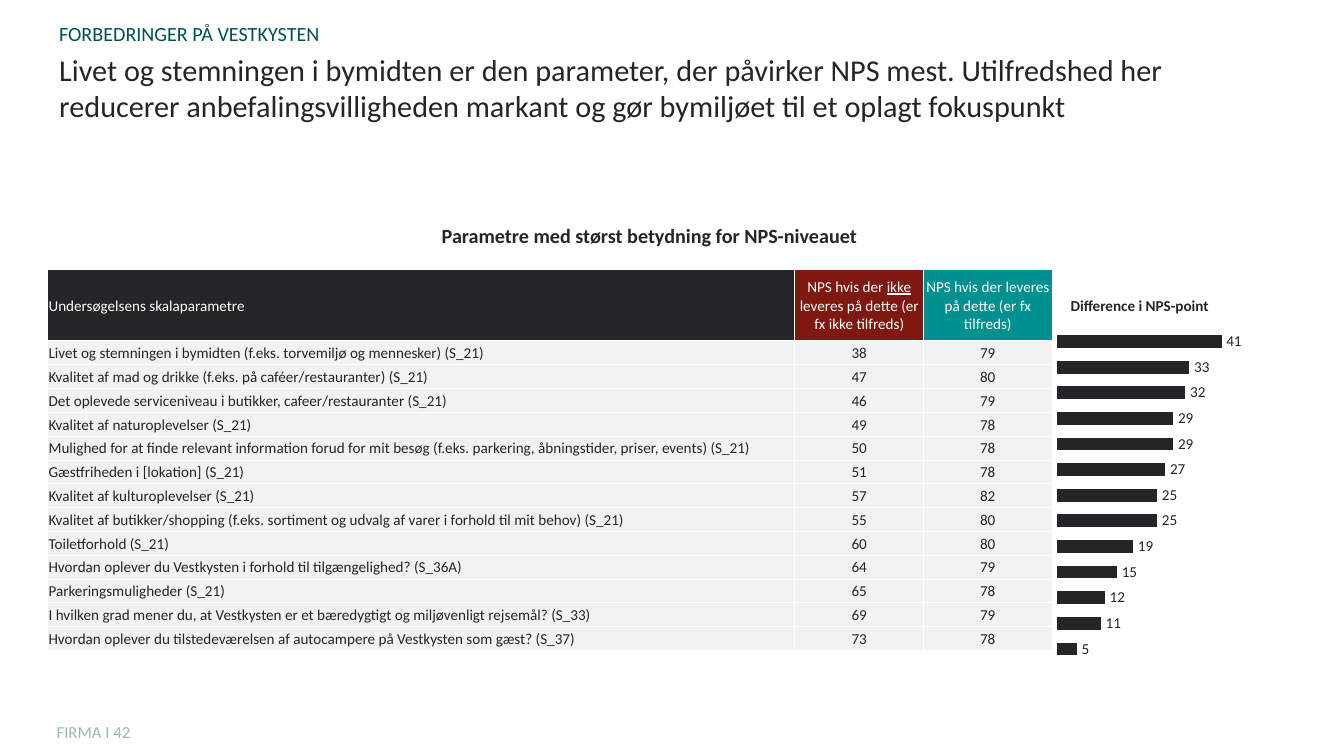
from dataclasses import dataclass

import pptx
import pptx.chart.data
import pptx.dml.color
import pptx.enum.chart
import pptx.enum.text
import pptx.oxml
import pptx.oxml.ns
import pptx.util

Cm = pptx.util.Cm
Pt = pptx.util.Pt
Align = pptx.enum.text.PP_ALIGN
Anchor = pptx.enum.text.MSO_ANCHOR

FONT = "Calibri"
INK = "252528"
WHITE = "FFFFFF"
ROW_FILL = "F2F2F2"
LEFT = 0.99
WIDTH = 25.3
COLUMN_WIDTHS = (15.7, 2.7, 2.7)
HEADER_HEIGHT = 1.5
ROW_HEIGHT = 0.5


@dataclass(frozen=True)
class Label:
    text: str
    left: float
    top: float
    width: float
    height: float
    size: float
    color: str = INK
    bold: bool = False
    align: Align = Align.LEFT


@dataclass(frozen=True)
class Header:
    spans: tuple[str, ...]
    fill: str
    align: Align = Align.CENTER


@dataclass(frozen=True)
class Parameter:
    name: str
    unmet: int
    met: int
    difference: int


TITLE = Label(
    "Livet og stemningen i bymidten er den parameter, der påvirker NPS mest. "
    "Utilfredshed her reducerer anbefalingsvilligheden markant og gør bymiljøet "
    "til et oplagt fokuspunkt",
    LEFT, 0.95, WIDTH, 1.27, 18,
)
LABELS = (
    Label("FIRMA I 42", 0.94, 15.04, 6.27, 0.69, 10, "99B9B9"),
    Label("FORBEDRINGER PÅ VESTKYSTEN", LEFT, 0.33, WIDTH, 0.64, 12, "005050"),
    Label("Parametre med størst betydning for NPS-niveauet",
          LEFT, 4.57, WIDTH, 0.76, 12, bold=True, align=Align.CENTER),
    Label("Difference i NPS-point", 22.23, 6.1, 3.68, 0.64, 9, bold=True),
)
UNDERLINED = "ikke"
HEADERS = (
    Header(("Undersøgelsens skalaparametre",), INK, Align.LEFT),
    Header(("NPS hvis der ", UNDERLINED, " leveres på dette (er fx ikke tilfreds)"), "7F1810"),
    Header(("NPS hvis der leveres på dette (er fx tilfreds)",), "009090"),
)
PARAMETERS = (
    Parameter("Livet og stemningen i bymidten (f.eks. torvemiljø og mennesker) (S_21)", 38, 79, 41),
    Parameter("Kvalitet af mad og drikke (f.eks. på caféer/restauranter) (S_21)", 47, 80, 33),
    Parameter("Det oplevede serviceniveau i butikker, cafeer/restauranter (S_21)", 46, 79, 32),
    Parameter("Kvalitet af naturoplevelser (S_21)", 49, 78, 29),
    Parameter("Mulighed for at finde relevant information forud for mit besøg "
              "(f.eks. parkering, åbningstider, priser, events) (S_21)", 50, 78, 29),
    Parameter("Gæstfriheden i [lokation] (S_21)", 51, 78, 27),
    Parameter("Kvalitet af kulturoplevelser (S_21)", 57, 82, 25),
    Parameter("Kvalitet af butikker/shopping (f.eks. sortiment og udvalg af varer "
              "i forhold til mit behov) (S_21)", 55, 80, 25),
    Parameter("Toiletforhold (S_21)", 60, 80, 19),
    Parameter("Hvordan oplever du Vestkysten i forhold til tilgængelighed? (S_36A)", 64, 79, 15),
    Parameter("Parkeringsmuligheder (S_21)", 65, 78, 12),
    Parameter("I hvilken grad mener du, at Vestkysten er et bæredygtigt og "
              "miljøvenligt rejsemål? (S_33)", 69, 79, 11),
    Parameter("Hvordan oplever du tilstedeværelsen af autocampere på Vestkysten "
              "som gæst? (S_37)", 73, 78, 5),
)


def rgb(color: str) -> pptx.dml.color.RGBColor:
    return pptx.dml.color.RGBColor.from_string(color)


def style_font(font, size: float, color: str, bold: bool = False) -> None:
    font.name = FONT
    font.size = Pt(size)
    font.bold = bold
    font.color.rgb = rgb(color)


def write_label(box, label: Label) -> None:
    box.left, box.top = Cm(label.left), Cm(label.top)
    box.width, box.height = Cm(label.width), Cm(label.height)
    frame = box.text_frame
    frame.word_wrap = True
    frame.auto_size = pptx.enum.text.MSO_AUTO_SIZE.NONE
    frame.vertical_anchor = Anchor.TOP
    frame.text = label.text
    para = frame.paragraphs[0]
    para.alignment = label.align
    style_font(para.font, label.size, label.color, label.bold)


def add_borders(cell) -> None:
    properties = cell._tc.get_or_add_tcPr()
    for side in ("lnL", "lnR", "lnT", "lnB"):
        properties.append(pptx.oxml.parse_xml(
            f'<a:{side} {pptx.oxml.ns.nsdecls("a")} w="{Pt(0.5)}">'
            f'<a:solidFill><a:srgbClr val="{WHITE}"/></a:solidFill></a:{side}>'
        ))


def write_cell(cell, spans: tuple[str, ...], fill: str, color: str, align: Align) -> None:
    add_borders(cell)
    cell.fill.solid()
    cell.fill.fore_color.rgb = rgb(fill)
    cell.margin_left = cell.margin_right = cell.margin_top = Cm(0.03)
    cell.margin_bottom = 0
    cell.vertical_anchor = Anchor.MIDDLE
    para = cell.text_frame.paragraphs[0]
    para.alignment = align
    style_font(para.font, 9, color)
    for text in spans:
        span = para.add_run()
        span.text = text
        if text == UNDERLINED:
            span.font.underline = True


def add_parameter_table(page) -> None:
    table = page.shapes.add_table(
        len(PARAMETERS) + 1, len(HEADERS), Cm(LEFT), Cm(5.66), Cm(sum(COLUMN_WIDTHS)),
        Cm(HEADER_HEIGHT + ROW_HEIGHT * len(PARAMETERS)),
    ).table
    table.first_row = table.horz_banding = False
    for column, width in zip(table.columns, COLUMN_WIDTHS):
        column.width = Cm(width)
    for index, row in enumerate(table.rows):
        row.height = Cm(ROW_HEIGHT if index else HEADER_HEIGHT)
    for column, header in enumerate(HEADERS):
        write_cell(table.cell(0, column), header.spans, header.fill, WHITE, header.align)
        for row, parameter in enumerate(PARAMETERS, 1):
            text = str((parameter.name, parameter.unmet, parameter.met)[column])
            write_cell(table.cell(row, column), (text,), ROW_FILL, INK, header.align)


def add_difference_chart(page) -> None:
    data = pptx.chart.data.CategoryChartData(number_format="0")
    data.categories = [str(number) for number in range(1, len(PARAMETERS) + 1)]
    data.add_series("Series 1", [parameter.difference for parameter in PARAMETERS])
    chart = page.shapes.add_chart(
        pptx.enum.chart.XL_CHART_TYPE.BAR_CLUSTERED,
        Cm(22.1), Cm(6.76), Cm(4.4), Cm(7.29), data,
    ).chart
    chart.has_legend = chart.has_title = False
    style_font(chart.font, 10, INK)
    chart.category_axis.reverse_order = True
    chart.value_axis.minimum_scale = 0
    chart.value_axis.maximum_scale = 50
    for axis in (chart.category_axis, chart.value_axis):
        axis.has_major_gridlines = False
        axis.visible = False
    plot = chart.plots[0]
    plot.gap_width = 100
    plot.vary_by_categories = False
    fill = plot.series[0].format.fill
    fill.solid()
    fill.fore_color.rgb = rgb(INK)
    plot.has_data_labels = True
    labels = plot.data_labels
    labels.show_value = True
    labels.number_format = "0"
    labels.number_format_is_linked = False
    labels.position = pptx.enum.chart.XL_LABEL_POSITION.OUTSIDE_END
    style_font(labels.font, 9, INK)
    area = chart._chartSpace.chart.plotArea
    for old in area.findall(pptx.oxml.ns.qn("c:layout")):
        area.remove(old)
    area.insert(0, pptx.oxml.parse_xml(
        f'<c:layout {pptx.oxml.ns.nsdecls("c")}><c:manualLayout>'
        '<c:layoutTarget val="inner"/><c:xMode val="edge"/><c:yMode val="edge"/>'
        '<c:x val="0.02"/><c:y val="0.02"/><c:w val="0.96"/><c:h val="0.96"/>'
        '</c:manualLayout></c:layout>'
    ))


def main() -> None:
    deck = pptx.Presentation()
    deck.slide_width, deck.slide_height = Cm(28.22), Cm(15.88)
    page = deck.slides.add_slide(deck.slide_layouts[5])
    write_label(page.shapes.title, TITLE)
    add_parameter_table(page)
    add_difference_chart(page)
    for label in LABELS:
        write_label(page.shapes.add_textbox(0, 0, 0, 0), label)
    deck.save("out.pptx")


if __name__ == "__main__":
    main()
